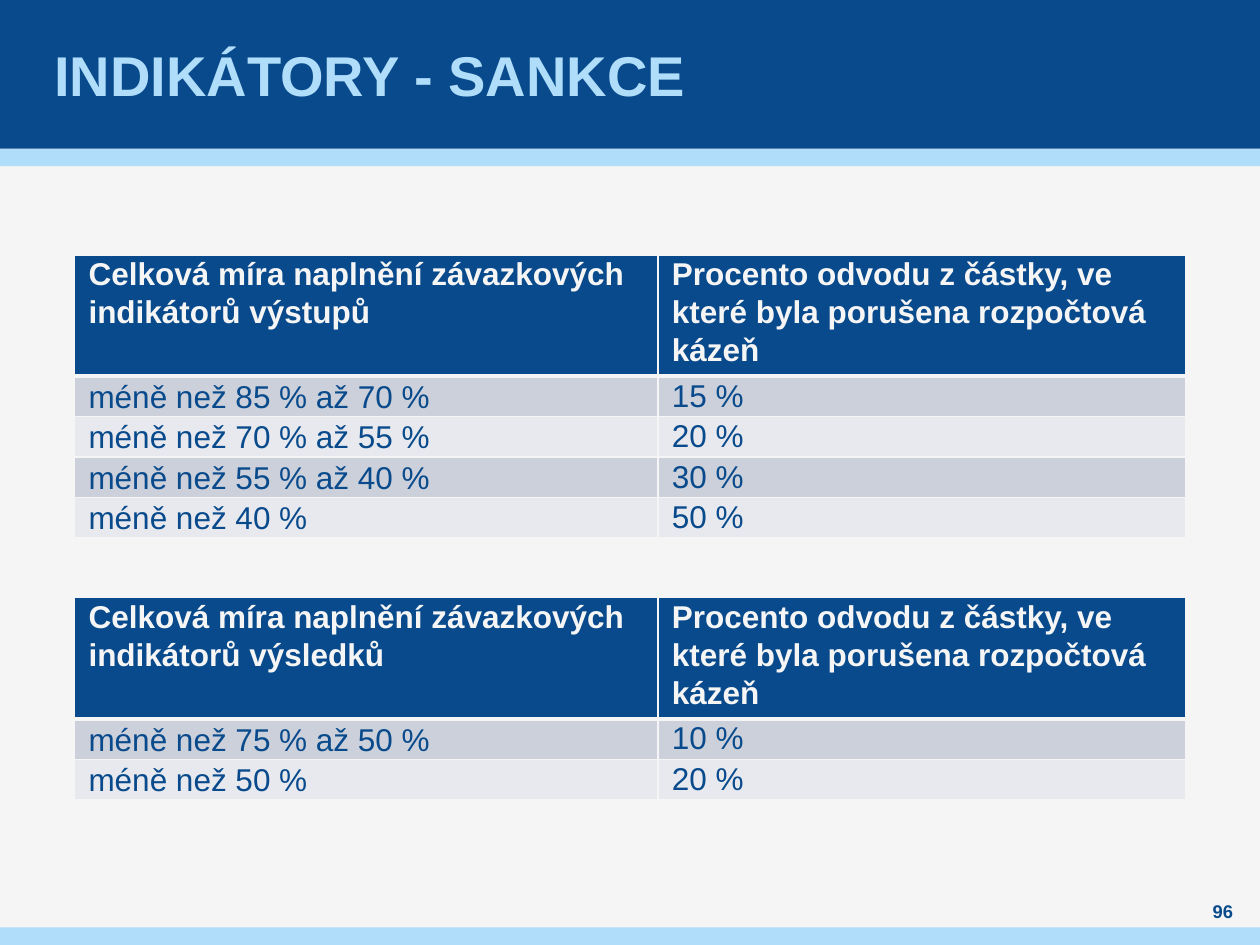
from lxml.etree import SubElement
from pptx import Presentation
from pptx.dml.color import RGBColor
from pptx.enum.shapes import MSO_SHAPE
from pptx.enum.text import MSO_ANCHOR, PP_ALIGN
from pptx.oxml import parse_xml
from pptx.oxml.ns import nsdecls, qn
from pptx.util import Pt

NAVY = RGBColor(0x08, 0x4A, 0x8B)
SKY = RGBColor(0xAF, 0xDD, 0xFA)
PAPER = RGBColor(0xF5, 0xF5, 0xF5)
BAND_FILLS = [RGBColor(0xCC, 0xD0, 0xDA), RGBColor(0xE7, 0xE9, 0xEE)]
FONT = "Arial"

# Content
TITLE = "INDIKÁTORY - SANKCE"
PAGE = "96"
PENALTY = "Procento odvodu z částky, ve které byla porušena rozpočtová kázeň"
OUTPUTS = [
    ("Celková míra naplnění závazkových indikátorů výstupů", PENALTY),
    ("méně než 85 % až 70 %", "15 %"),
    ("méně než 70 % až 55 %", "20 %"),
    ("méně než 55 % až 40 %", "30 %"),
    ("méně než 40 %", "50 %"),
]
RESULTS = [
    ("Celková míra naplnění závazkových indikátorů výsledků", PENALTY),
    ("méně než 75 % až 50 %", "10 %"),
    ("méně než 50 %", "20 %"),
]
TABLES = [(145.6, OUTPUTS), (341.5, RESULTS)]  # top, rows

# Layout
WIDTH, HEIGHT = 720, 540
HEADER_H, STRIPE_H = 85, 10
TABLE_LEFT = 42.6
COL_WIDTHS = [333.4, 301.4]
HEAD_ROW_H, ROW_H = 63.4, 23.1


def add_bar(slide, top, height, color):
    sp = slide.shapes.add_shape(MSO_SHAPE.RECTANGLE, 0, Pt(top), Pt(WIDTH), Pt(height))
    sp.shadow.inherit = False
    sp.fill.solid()
    sp.fill.fore_color.rgb = color
    sp.line.fill.background()


def add_run(p, text, size, color, bold):
    r = p.add_run()
    r.text = text
    r.font.name = FONT
    r.font.size = Pt(size)
    r.font.bold = bold
    r.font.color.rgb = color


def set_frame(tf, side_inset):
    tf.margin_left = tf.margin_right = Pt(side_inset)
    tf.margin_top = tf.margin_bottom = 0
    tf.vertical_anchor = MSO_ANCHOR.MIDDLE
    tf.word_wrap = True


def set_borders(cell, widths):
    tc_pr = cell._tc.get_or_add_tcPr()
    for i, (side, width) in enumerate(widths.items()):
        ln = parse_xml(f'<a:ln{side} {nsdecls("a")} w="{Pt(width)}"/>')
        fill = SubElement(ln, qn("a:solidFill"))
        SubElement(fill, qn("a:srgbClr"), val=str(PAPER))
        tc_pr.insert(i, ln)


def fill_cell(cell, text, row, col):
    head = row == 0
    cell.margin_left = cell.margin_right = Pt(5)
    cell.margin_top = cell.margin_bottom = 0
    body_label = not head and col == 0
    cell.vertical_anchor = MSO_ANCHOR.MIDDLE if body_label else MSO_ANCHOR.TOP
    cell.fill.solid()
    cell.fill.fore_color.rgb = NAVY if head else BAND_FILLS[(row - 1) % 2]
    set_borders(cell, {"L": 1, "R": 1, "T": 3 if row == 1 else 1, "B": 3 if head else 1})
    p = cell.text_frame.paragraphs[0]
    p.line_spacing = 1.07
    p.space_before = p.space_after = Pt(1)
    p_pr = p._p.get_or_add_pPr()
    p_pr.set("marL", str(Pt(3)))
    p_pr.set("indent", "0")
    add_run(p, text, 18, PAPER if head else NAVY, head)


def add_rate_table(slide, top, rows):
    heights = [HEAD_ROW_H] + [ROW_H] * (len(rows) - 1)
    table = slide.shapes.add_table(len(rows), len(COL_WIDTHS), Pt(TABLE_LEFT), Pt(top),
                                   Pt(sum(COL_WIDTHS)), Pt(sum(heights))).table
    for column, width in zip(table.columns, COL_WIDTHS):
        column.width = Pt(width)
    for i, texts in enumerate(rows):
        table.rows[i].height = Pt(heights[i])
        for j, text in enumerate(texts):
            fill_cell(table.cell(i, j), text, i, j)


def main():
    prs = Presentation()
    prs.slide_width, prs.slide_height = Pt(WIDTH), Pt(HEIGHT)
    slide = prs.slides.add_slide(prs.slide_layouts[5])
    slide.background.fill.solid()
    slide.background.fill.fore_color.rgb = PAPER

    # Header and footer bars
    add_bar(slide, HEADER_H, STRIPE_H, SKY)
    add_bar(slide, 0, HEADER_H, NAVY)
    add_bar(slide, HEIGHT - STRIPE_H, STRIPE_H, SKY)

    # Title, brought in front of the header bar
    title = slide.shapes.title
    title.left, title.top, title.width, title.height = Pt(28), 0, Pt(663), Pt(HEADER_H)
    slide.shapes._spTree.append(title._element)
    set_frame(title.text_frame, 3)
    p = title.text_frame.paragraphs[0]
    p.alignment = PP_ALIGN.LEFT
    add_run(p, TITLE, 32, SKY, True)

    # Page number
    tf = slide.shapes.add_textbox(Pt(680.4), Pt(513.4), Pt(36.7), Pt(14.4)).text_frame
    set_frame(tf, 0)
    p = tf.paragraphs[0]
    p.alignment = PP_ALIGN.CENTER
    p.space_after = Pt(6)
    add_run(p, PAGE, 10.5, NAVY, True)

    # Penalty tables
    for top, rows in TABLES:
        add_rate_table(slide, top, rows)

    prs.save("out.pptx")


if __name__ == "__main__":
    main()
